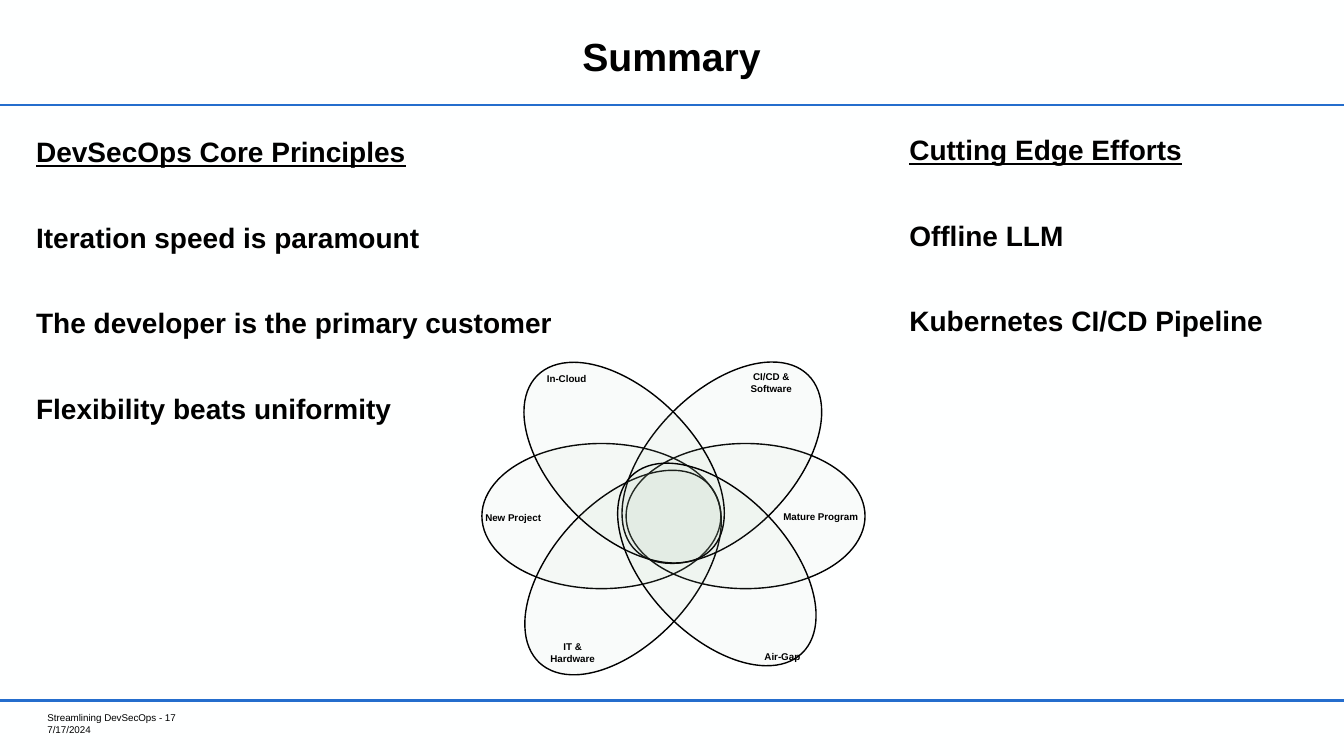
from lxml import etree
from pptx import Presentation, util as u
from pptx.dml.color import RGBColor
from pptx.enum import shapes, text
from pptx.oxml.ns import qn

COLORS = {"paper": "FEFFFF", "ink": "000000", "rule": "246DCD", "petal": "ADCAAD"}
FONT = "Arial"
PETAL_ALPHA = 6  # percent
SLIDE_WIDTH, SLIDE_HEIGHT = 13.33, 7.5

TITLE = ("Summary", (1.37, 0.11, 10.58, 0.89))
FOOTER = (["Streamlining DevSecOps - 17", "7/17/2024"], (0.47, 7.06, 1.59, 0.24))
RULES = [(1.04, 1.5), (6.95, 1.75)]  # height on the page, line width

COLUMNS = [
    ((0.26, 1.29, 5.5, 3.17), [
        "DevSecOps Core Principles",
        "Iteration speed is paramount",
        "The developer is the primary customer",
        "Flexibility beats uniformity",
    ]),
    ((8.92, 1.27, 4.08, 3.17), [
        "Cutting Edge Efforts",
        "Offline LLM",
        "Kubernetes CI/CD Pipeline",
    ]),
]

PETALS = [  # left, top, width, height, rotation
    (4.78, 4.4, 2.37, 1.44, 0),
    (6.21, 4.4, 2.37, 1.44, 0),
    (4.96, 4.98, 2.44, 1.4, 312.7),
    (5.94, 3.89, 2.44, 1.4, 314.5),
    (4.97, 3.89, 2.44, 1.4, 45.1),
    (5.89, 4.9, 2.44, 1.4, 46.2),
]
PETAL_LABELS = [
    ("New Project", (4.71, 5.03, 0.76, 0.23)),
    ("Mature Program", (7.66, 5.02, 0.96, 0.23)),
    ("In-Cloud", (5.24, 3.65, 0.76, 0.23)),
    ("Air-Gap", (7.38, 6.41, 0.76, 0.23)),
    ("IT & Hardware", (5.3, 6.31, 0.76, 0.35)),
    ("CI/CD & Software", (7.27, 3.63, 0.76, 0.35)),
]


def rgb(name):
    return RGBColor.from_string(COLORS[name])


def inches(values):
    return [u.Inches(value) for value in values]


def add_text(parent, lines, place, size, bold=True, centred=False, middle=False,
             inset=(0.1, 0.05), gap=0, underline_first=False):
    """Add a text box with one paragraph per line, gap points apart."""
    box = parent.add_textbox(*inches(place))
    frame = box.text_frame
    frame.word_wrap = True
    frame.margin_left = frame.margin_right = u.Inches(inset[0])
    frame.margin_top = frame.margin_bottom = u.Inches(inset[1])
    frame.vertical_anchor = text.MSO_ANCHOR.MIDDLE if middle else text.MSO_ANCHOR.TOP
    for index, line in enumerate(lines):
        para = frame.add_paragraph() if index else frame.paragraphs[0]
        para.alignment = text.PP_ALIGN.CENTER if centred else text.PP_ALIGN.LEFT
        if index:
            para.space_before = u.Pt(gap)
        span = para.add_run()
        span.text = line
        span.font.name = FONT
        span.font.size = u.Pt(size)
        span.font.bold = bold
        span.font.underline = underline_first and index == 0
        span.font.color.rgb = rgb("ink")


def add_rule(page, top, width):
    rule = page.shapes.add_connector(
        shapes.MSO_CONNECTOR.STRAIGHT, *inches((0, top, SLIDE_WIDTH, top)))
    rule.line.color.rgb = rgb("rule")
    rule.line.width = u.Pt(width)
    etree.SubElement(rule._element.spPr, qn("a:effectLst"))


def add_petal(parent, *place, rotation):
    petal = parent.add_shape(shapes.MSO_SHAPE.OVAL, *inches(place))
    petal.rotation = rotation
    petal.shadow.inherit = False
    petal.fill.solid()
    petal.fill.fore_color.rgb = rgb("petal")
    color = petal._element.spPr.find(qn("a:solidFill"))[0]
    etree.SubElement(color, qn("a:alpha"), val=str(PETAL_ALPHA * 1000))
    petal.line.color.rgb = rgb("ink")
    petal.line.width = u.Pt(1)


def main():
    deck = Presentation()
    deck.slide_width, deck.slide_height = inches((SLIDE_WIDTH, SLIDE_HEIGHT))
    page = deck.slides.add_slide(deck.slide_layouts[6])
    page.background.fill.solid()
    page.background.fill.fore_color.rgb = rgb("paper")

    for top, width in RULES:
        add_rule(page, top, width)
    footer_lines, footer_place = FOOTER
    add_text(page.shapes, footer_lines, footer_place, 7, bold=False, inset=(0, 0))
    title, title_place = TITLE
    add_text(page.shapes, [title], title_place, 28, centred=True, middle=True)

    for place, lines in COLUMNS:
        add_text(page.shapes, lines, place, 20, gap=37, underline_first=True)

    flower = page.shapes.add_group_shape().shapes
    for *place, rotation in PETALS:
        add_petal(flower, *place, rotation=rotation)
    for label, place in PETAL_LABELS:
        add_text(flower, [label], place, 7, centred=True)

    deck.save("out.pptx")


if __name__ == "__main__":
    main()
